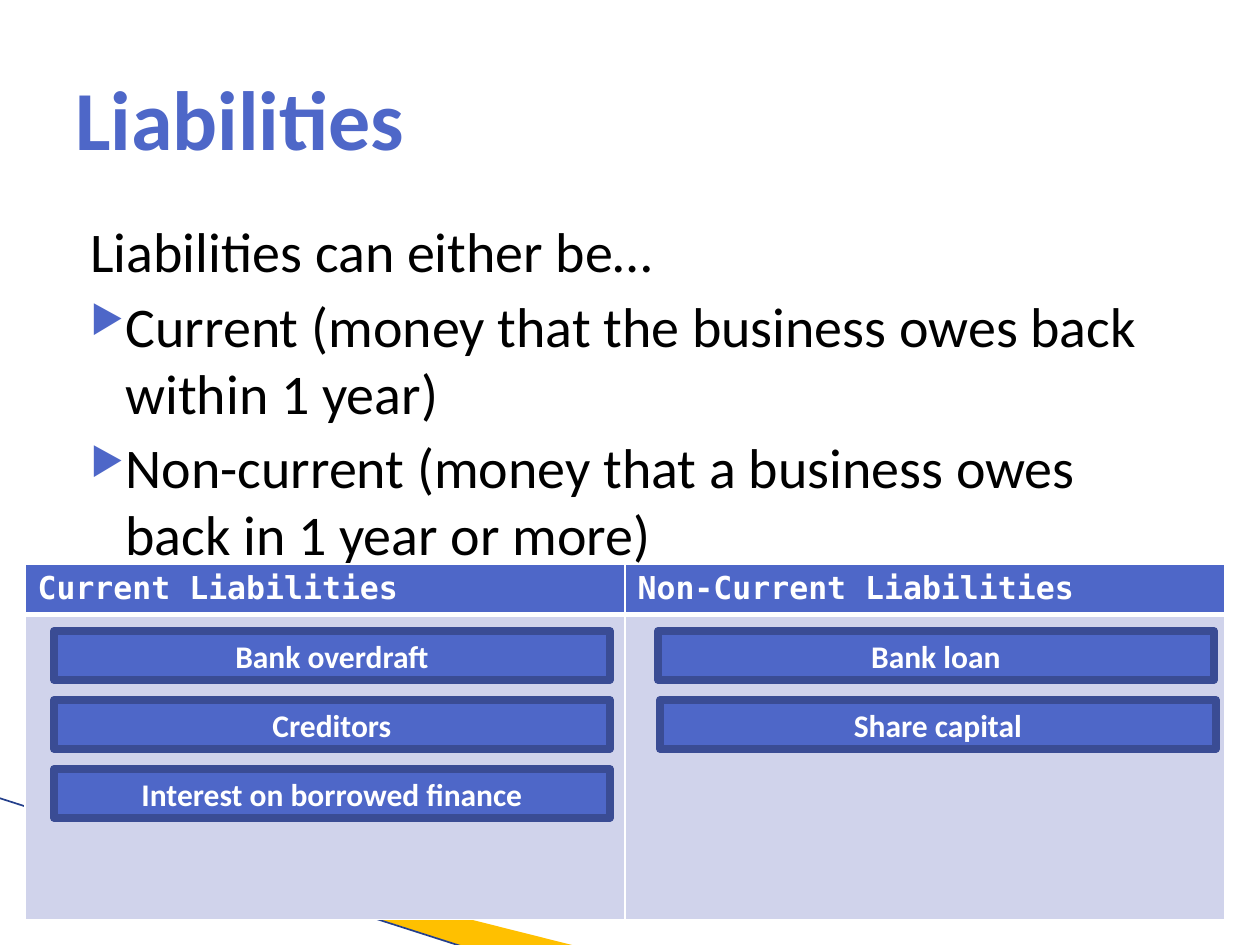
from pptx import Presentation
from pptx.dml.color import RGBColor as RGB
from pptx.enum.shapes import MSO_CONNECTOR as CON, MSO_SHAPE as SHAPE
from pptx.enum.text import MSO_ANCHOR as ANCHOR, PP_ALIGN as ALIGN
from pptx.oxml.ns import qn
from pptx.util import Emu, Pt
from lxml.etree import SubElement as Sub

# Content
TITLE = "Liabilities"
LEAD = "Liabilities can either be…"
POINTS = [
    "Current (money that the business owes back within 1 year)",
    "Non-current (money that a business owes back in 1 year or more)",
]
# Heading, then (left edge, label) of each box
GROUPS = [
    ("Current Liabilities",
     [(54, "Bank overdraft"), (54, "Creditors"),
      (54, "Interest on borrowed finance")]),
    ("Non-Current Liabilities",
     [(658, "Bank loan"), (660, "Share capital")]),
]

# Theme
BLUE, WHITE = "4E67C8", "FFFFFF"
THEME = {
    "edge": "3A4C94", "pale": "D0D3EB", "gold": "FFC000", "rule": "243F8B",
    "title": dict(name="Calibri", size=48, color=BLUE, bold=True),
    "body": dict(name="Calibri", size=32, color="000000", bold=False),
    "head": dict(name="DejaVu Sans Mono", size=18, color=WHITE, bold=True),
    "box": dict(name="Calibri", size=18, color=WHITE, bold=True),
}

# Layout, in px
SCALE = 914400 // 126
TABLE = (25, 564, 1200, 355)
HEAD_H = 50
BOX_W, BOX_H, BOX_TOP, BOX_STEP = 556, 49, 631, 69


def px(*nums):
    return [Emu(n * SCALE) for n in nums]


def style(para, kind):
    for key, val in THEME[kind].items():
        if key == "color":
            para.font.color.rgb = RGB.from_string(val)
        else:
            setattr(para.font, key, Pt(val) if key == "size" else val)


def paint(fill, color):
    fill.solid()
    fill.fore_color.rgb = RGB.from_string(color)


def bullet(para):
    props = para._p.get_or_add_pPr()
    color = Sub(props, qn("a:buClr"))
    Sub(color, qn("a:srgbClr"), val=BLUE)
    Sub(props, qn("a:buSzPct"), val="68000")
    Sub(props, qn("a:buChar"), char="▶")


def indent(para, left, first):
    props = para._p.get_or_add_pPr()
    for key, val in (("marL", left), ("indent", first)):
        props.set(key, str(val * SCALE))


def border(cell, widths):
    props = cell._tc.get_or_add_tcPr()
    for side, wide in zip("LRTB", widths):
        line = Sub(props, qn("a:ln" + side), w=str(Pt(wide)))
        Sub(Sub(line, qn("a:solidFill")), qn("a:srgbClr"), val=WHITE)


def text_box(slide, *spot):
    frame = slide.shapes.add_textbox(*px(*spot)).text_frame
    frame.word_wrap = True
    return frame


def add_decor(slide):
    pen = slide.shapes.build_freeform(67, 818, scale=SCALE)
    pen.add_line_segments([(576, 946), (469, 948), (68, 819)])
    wedge = pen.convert_to_shape()
    wedge.shadow.inherit = False
    paint(wedge.fill, THEME["gold"])
    wedge.line.fill.background()
    rule = slide.shapes.add_connector(CON.STRAIGHT, *px(-1, 798, 467, 948))
    rule.line.color.rgb = RGB.from_string(THEME["rule"])
    rule.line.width = Pt(0.95)
    Sub(rule._element.spPr, qn("a:effectLst"))


def add_text(slide):
    body = text_box(slide, 63, 204, 1134, 624)
    body.margin_top = px(13)[0]
    for num, text in enumerate([LEAD] + POINTS):
        para = body.add_paragraph() if num else body.paragraphs[0]
        para.text = text
        if num:
            indent(para, 50, -35)
            para.space_before = Pt(4)
            bullet(para)
        else:
            indent(para, 15, 0)
        style(para, "body")
    title = text_box(slide, 63, 38, 1134, 158)
    title.vertical_anchor = ANCHOR.MIDDLE
    title.text = TITLE
    style(title.paragraphs[0], "title")


def add_grid(slide):
    grid = slide.shapes.add_table(2, len(GROUPS), *px(*TABLE)).table
    grid.horz_banding = False
    for row, high in zip(grid.rows, px(HEAD_H, TABLE[3] - HEAD_H)):
        row.height = high
    for col, (head, _) in enumerate(GROUPS):
        top, low = grid.cell(0, col), grid.cell(1, col)
        top.text = head
        style(top.text_frame.paragraphs[0], "head")
        border(top, (1, 1, 1, 3))
        border(low, (1, 1, 3, 1))
        paint(top.fill, BLUE)
        paint(low.fill, THEME["pale"])


def add_box(slide, left, top, text):
    box = slide.shapes.add_shape(SHAPE.RECTANGLE, *px(left, top, BOX_W, BOX_H))
    box.shadow.inherit = False
    paint(box.fill, BLUE)
    box.line.color.rgb = RGB.from_string(THEME["edge"])
    box.line.width = Pt(4.33)
    frame = box.text_frame
    frame.word_wrap = True
    frame.vertical_anchor = ANCHOR.MIDDLE
    frame.text = text
    para = frame.paragraphs[0]
    para.alignment = ALIGN.CENTER
    style(para, "box")


def main():
    deck = Presentation()
    deck.slide_width, deck.slide_height = px(1260, 945)
    slide = deck.slides.add_slide(deck.slide_layouts[6])
    add_decor(slide)
    add_text(slide)
    add_grid(slide)
    for _, boxes in GROUPS:
        for num, (left, text) in enumerate(boxes):
            add_box(slide, left, BOX_TOP + num * BOX_STEP, text)
    deck.save("out.pptx")


if __name__ == "__main__":
    main()
